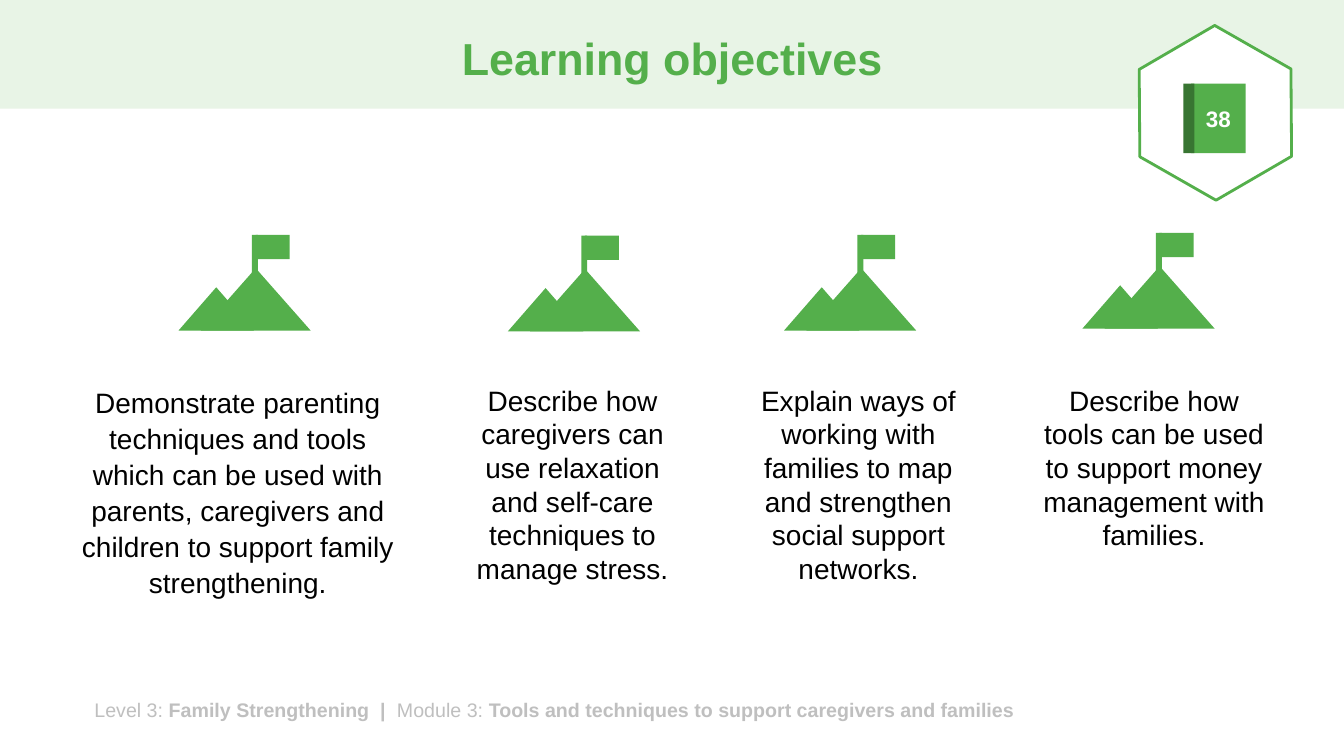
from pptx import Presentation
from pptx.dml.color import RGBColor
from pptx.enum.shapes import MSO_SHAPE
from pptx.enum.text import MSO_ANCHOR, PP_ALIGN
from pptx.util import Cm, Pt

RECTANGLE = MSO_SHAPE.RECTANGLE
TRIANGLE = MSO_SHAPE.ISOSCELES_TRIANGLE
HEXAGON = MSO_SHAPE.HEXAGON
MIDDLE, TOP = MSO_ANCHOR.MIDDLE, MSO_ANCHOR.TOP
CENTER, LEFT = PP_ALIGN.CENTER, PP_ALIGN.LEFT

COLORS = {
    "green": "54AF4B",
    "dark green": "387532",
    "pale green": "E8F4E6",
    "white": "FFFFFF",
    "black": "000000",
    "gray": "BFBFBF",
}

# Column: text, text left, text width, text height, line spacing, icon left, icon top
OBJECTIVES = [
    ("Demonstrate parenting techniques and tools which can be used with parents, "
     "caregivers and children to support family strengthening.",
     1.78, 8.43, 5.74, 1.07, 4.5, 5.92),
    ("Describe how caregivers can use relaxation and self-care techniques to manage stress.",
     11.61, 5.64, 5.38, 1.0, 12.8, 5.94),
    ("Explain ways of working with families to map and strengthen social support networks.",
     18.69, 5.89, 5.38, 1.0, 19.76, 5.92),
    ("Describe how tools can be used to support money management with families.",
     26.01, 6.15, 4.52, 1.0, 27.28, 5.87),
]
OBJECTIVE_TOP = 9.53

# Mountain icon parts: preset, offset from the icon corner, size
MOUNTAIN_PARTS = [
    (RECTANGLE, 1.85, 0, 0.15, 1.02),   # pole
    (RECTANGLE, 1.94, 0, 0.86, 0.61),   # flag
    (TRIANGLE, 0.56, 0.84, 2.77, 1.57),  # high peak
    (TRIANGLE, 0, 1.32, 1.9, 1.09),     # low peak
]

FOOTER_RUNS = [
    ("Level 3: ", False),
    ("Family Strengthening  |  ", True),
    ("Module 3: ", False),
    ("Tools and techniques to support caregivers and families", True),
]


class SlideBuilder:
    font = "Arial"

    def __init__(self, presentation):
        self.slide = presentation.slides.add_slide(presentation.slide_layouts[5])

    def color(self, name):
        return RGBColor.from_string(COLORS[name])

    def set_text(self, shape, runs, size, color, align=CENTER, anchor=TOP, spacing=1.0, wrap=True):
        """Fill a shape with one paragraph of (text, bold) runs."""
        frame = shape.text_frame
        frame_format = {
            "word_wrap": wrap, "vertical_anchor": anchor,
            "margin_left": Cm(0.25), "margin_right": Cm(0.25),
            "margin_top": Cm(0.13), "margin_bottom": Cm(0.13),
        }
        for name, value in frame_format.items():
            setattr(frame, name, value)
        paragraph = frame.paragraphs[0]
        paragraph.alignment = align
        paragraph.line_spacing = spacing
        for text, bold in runs:
            run = paragraph.add_run()
            run.text = text
            for name, value in {"name": self.font, "size": Pt(size), "bold": bold}.items():
                setattr(run.font, name, value)
            run.font.color.rgb = self.color(color)

    def title(self, text, left, top, width, height):
        title = self.slide.shapes.title
        box = {"left": left, "top": top, "width": width, "height": height}
        for name, value in box.items():
            setattr(title, name, Cm(value))
        self.set_text(title, [(text, True)], 32, "green", anchor=MIDDLE, spacing=0.9)
        return title

    def text(self, runs, box, size, color, **layout):
        shape = self.slide.shapes.add_textbox(*map(Cm, box))
        self.set_text(shape, runs, size, color, **layout)

    def shape(self, preset, box, fill, line=None, group=None):
        shapes = (group or self.slide).shapes
        shape = shapes.add_shape(preset, *map(Cm, box))
        shape.shadow.inherit = False
        shape.fill.solid()
        shape.fill.fore_color.rgb = self.color(fill)
        if line:
            shape.line.color.rgb = self.color(line)
            shape.line.width = Pt(2)
        else:
            shape.line.fill.background()
        return shape

    def group(self):
        return self.slide.shapes.add_group_shape()

    def mountain(self, left, top):
        group = self.group()
        for preset, x, y, width, height in MOUNTAIN_PARTS:
            self.shape(preset, (left + x, top + y, width, height), "green", group=group)

    def page_badge(self, number):
        group = self.group()
        hexagon = self.shape(HEXAGON, (28.42, 0.94, 4.42, 3.81), "white", "green", group)
        hexagon.adjustments[0] = 0.29
        hexagon.rotation = 29.7
        book = self.shape(RECTANGLE, (30.02, 2.11, 1.37, 1.75), "green", group=group)
        self.set_text(book, [(number, True)], 16, "white", anchor=MIDDLE, wrap=False)
        self.shape(RECTANGLE, (29.82, 2.11, 0.28, 1.75), "dark green", group=group)


def main():
    presentation = Presentation()
    presentation.slide_width = Cm(33.87)
    presentation.slide_height = Cm(19.05)
    builder = SlideBuilder(presentation)

    # Header band behind the title
    title = builder.title("Learning objectives", 2.34, 0.33, 29.21, 2.41)
    band = builder.shape(RECTANGLE, (0, 0, 33.87, 2.74), "pale green")
    title.element.addprevious(band.element)

    # Footer
    builder.text(FOOTER_RUNS, (2.13, 17.45, 26.97, 0.86), 14, "gray", align=LEFT)

    # Objectives with their icons
    for text, left, width, height, spacing, icon_left, icon_top in OBJECTIVES:
        builder.mountain(icon_left, icon_top)
        box = (left, OBJECTIVE_TOP, width, height)
        builder.text([(text, False)], box, 20, "black", spacing=spacing)

    # Workbook page number
    builder.page_badge("38")

    presentation.save("out.pptx")


if __name__ == "__main__":
    main()
